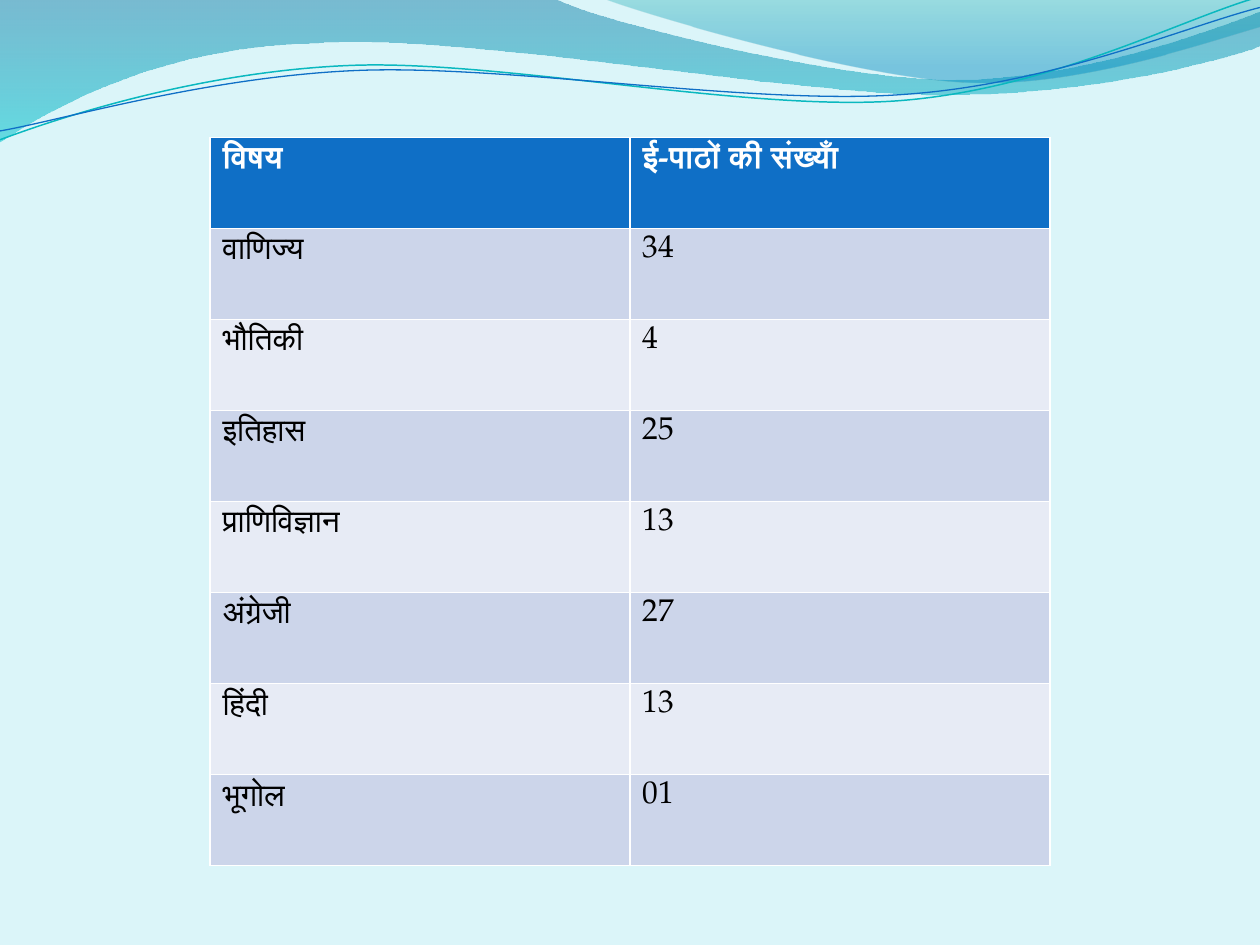
import math

import lxml.etree
import pptx
import pptx.dml.color
import pptx.enum.lang
import pptx.oxml.ns
import pptx.util

Inches = pptx.util.Inches
Pt = pptx.util.Pt
RGBColor = pptx.dml.color.RGBColor
qn = pptx.oxml.ns.qn

BACKGROUND = RGBColor(0xDB, 0xF5, 0xF9)
DEEP_BLUE = RGBColor(0x00, 0x74, 0xA1)
BRIGHT_TEAL = RGBColor(0x00, 0xC6, 0xCF)
SEA_GREEN = RGBColor(0x00, 0xA1, 0xA9)
SKY_BLUE = RGBColor(0x00, 0x8B, 0xBF)
LINE_TEAL = RGBColor(0x0A, 0xB8, 0xBF)
BLUE = RGBColor(0x0F, 0x6F, 0xC6)
BAND_DARK = RGBColor(0xCC, 0xD5, 0xEA)
BAND_LIGHT = RGBColor(0xE7, 0xEB, 0xF5)
WHITE = RGBColor(0xFF, 0xFF, 0xFF)
BLACK = RGBColor(0x00, 0x00, 0x00)

FONT = "TeX Gyre Pagella"
LINE_TILT = -2.7

# Each outline is a list of segments: two numbers for a straight line to a point,
# six for a cubic curve (two control points, then the end point).
LEFT_WAVE = [
    (0, 0), (4.4, -0.01),
    (4.76, 0.17, 6.64, 0.63, 7.58, 0.63), (8.53, 0.63, 9.58, 0.26, 10, 0.09),
    (10.01, 0.36),
    (9.83, 0.44, 8.7, 0.76, 7.46, 0.75), (6.22, 0.75, 3.82, 0.28, 2.57, 0.34),
    (1.29, 0.36, 0.46, 0.83, -0.01, 1.13),
]
RIGHT_WAVE = [
    (4.79, -0.01),
    (5.09, 0.11, 6.82, 0.62, 7.69, 0.65), (8.56, 0.69, 9.61, 0.32, 10, 0.21),
    (10, 0),
]
TEAL_LINE = [
    (0, 1.11),
    (0.48, 0.93, 1.58, 0.57, 2.77, 0.52), (3.95, 0.47, 5.93, 0.89, 7.13, 0.8),
    (8.33, 0.71, 9.38, 0.15, 9.98, -0.02),
]
BLUE_LINE = [
    (0, 1.04),
    (0.47, 0.96, 1.64, 0.61, 2.83, 0.56), (4.03, 0.51, 5.97, 0.84, 7.17, 0.75),
    (8.36, 0.67, 9.41, 0.21, 10, 0.06),
]

SUBJECT_ROWS = [
    ("विषय", "ई-पाठों की संख्याँ"),
    ("वाणिज्य", "34"),
    ("भौतिकी", "4"),
    ("इतिहास", "25"),
    ("प्राणिविज्ञान", "13"),
    ("अंग्रेजी", "27"),
    ("हिंदी", "13"),
    ("भूगोल", "01"),
]


def split_points(segment):
    return list(zip(segment[::2], segment[1::2]))


def turn_segments(segments, degrees):
    """Turn segments clockwise about the middle between their two ends."""
    (start_x, start_y), (end_x, end_y) = segments[0], segments[-1][-2:]
    center_x, center_y = (start_x + end_x) / 2, (start_y + end_y) / 2
    cosine, sine = math.cos(math.radians(degrees)), math.sin(math.radians(degrees))
    turned = []
    for segment in segments:
        coordinates = []
        for x, y in split_points(segment):
            dx, dy = x - center_x, y - center_y
            coordinates += [center_x + dx * cosine - dy * sine,
                            center_y + dx * sine + dy * cosine]
        turned.append(tuple(coordinates))
    return turned


def write_text(text_frame, text, size=18, color=BLACK, bold=False):
    run = text_frame.paragraphs[0].add_run()
    run.text = text
    font = run.font
    font.name = FONT
    font.size = Pt(size)
    font.bold = bold
    font.color.rgb = color
    font.language_id = pptx.enum.lang.MSO_LANGUAGE_ID.HINDI


class SlideBuilder:
    def __init__(self, slide):
        self.slide = slide
        background = slide.background.fill
        background.solid()
        background.fore_color.rgb = BACKGROUND

    def add_outline(self, segments, close):
        """Build a freeform through the end points, then bend its curved parts."""
        ends = [(Inches(x), Inches(y)) for x, y in (part[-2:] for part in segments)]
        builder = self.slide.shapes.build_freeform(*ends[0])
        builder.add_line_segments(ends[1:], close=close)
        shape = builder.convert_to_shape()
        shape.shadow.inherit = False
        lines = list(shape._element.iter(qn("a:lnTo")))
        for line, segment in zip(lines, segments[1:]):
            if len(segment) == 2:
                continue
            curve = lxml.etree.Element(qn("a:cubicBezTo"))
            for x, y in split_points(segment):
                point = lxml.etree.SubElement(curve, qn("a:pt"))
                point.set("x", str(Inches(x) - shape.left))
                point.set("y", str(Inches(y) - shape.top))
            line.getparent().replace(line, curve)
        return shape

    def add_wave(self, segments, stops):
        """Add a filled wave; stops hold position, colour and opacity percent."""
        shape = self.add_outline(segments, close=True)
        shape.line.fill.background()
        shape.fill.gradient()
        shape.fill.gradient_angle = 270
        for stop, (position, color, _) in zip(shape.fill.gradient_stops, stops):
            stop.position = position
            stop.color.rgb = color
        colors = shape._element.spPr.find(qn("a:gradFill")).iter(qn("a:srgbClr"))
        for element, (_, _, opacity) in zip(colors, stops):
            alpha = lxml.etree.SubElement(element, qn("a:alpha"))
            alpha.set("val", str(opacity * 1000))

    def add_curve(self, segments, color, width):
        shape = self.add_outline(turn_segments(segments, -LINE_TILT), close=False)
        shape.rotation = LINE_TILT
        shape.fill.background()
        shape.line.color.rgb = color
        shape.line.width = Pt(width)

    def add_table(self, rows, left, top, width, height):
        """Add a table whose white rules come from the default table style."""
        frame = self.slide.shapes.add_table(
            len(rows), len(rows[0]),
            Inches(left), Inches(top), Inches(width), Inches(height))
        for row_index, row in enumerate(rows):
            header = row_index == 0
            band = BLUE if header else (BAND_LIGHT, BAND_DARK)[row_index % 2]
            for column_index, text in enumerate(row):
                cell = frame.table.cell(row_index, column_index)
                write_text(cell.text_frame, text,
                           color=WHITE if header else BLACK, bold=header)
                cell.fill.solid()
                cell.fill.fore_color.rgb = band


def main():
    presentation = pptx.Presentation()
    presentation.slide_width = Inches(10)
    presentation.slide_height = Inches(7.5)
    builder = SlideBuilder(presentation.slides.add_slide(presentation.slide_layouts[6]))

    builder.add_wave(LEFT_WAVE, [(0, DEEP_BLUE, 45), (1, BRIGHT_TEAL, 55)])
    builder.add_wave(RIGHT_WAVE, [(0, SEA_GREEN, 30), (0.8, SKY_BLUE, 45)])
    builder.add_curve(TEAL_LINE, LINE_TEAL, 0.85)
    builder.add_curve(BLUE_LINE, BLUE, 0.75)
    builder.add_table(SUBJECT_ROWS, left=10 / 6, top=1.09, width=20 / 3, height=5.78)

    presentation.save("out.pptx")


if __name__ == "__main__":
    main()
